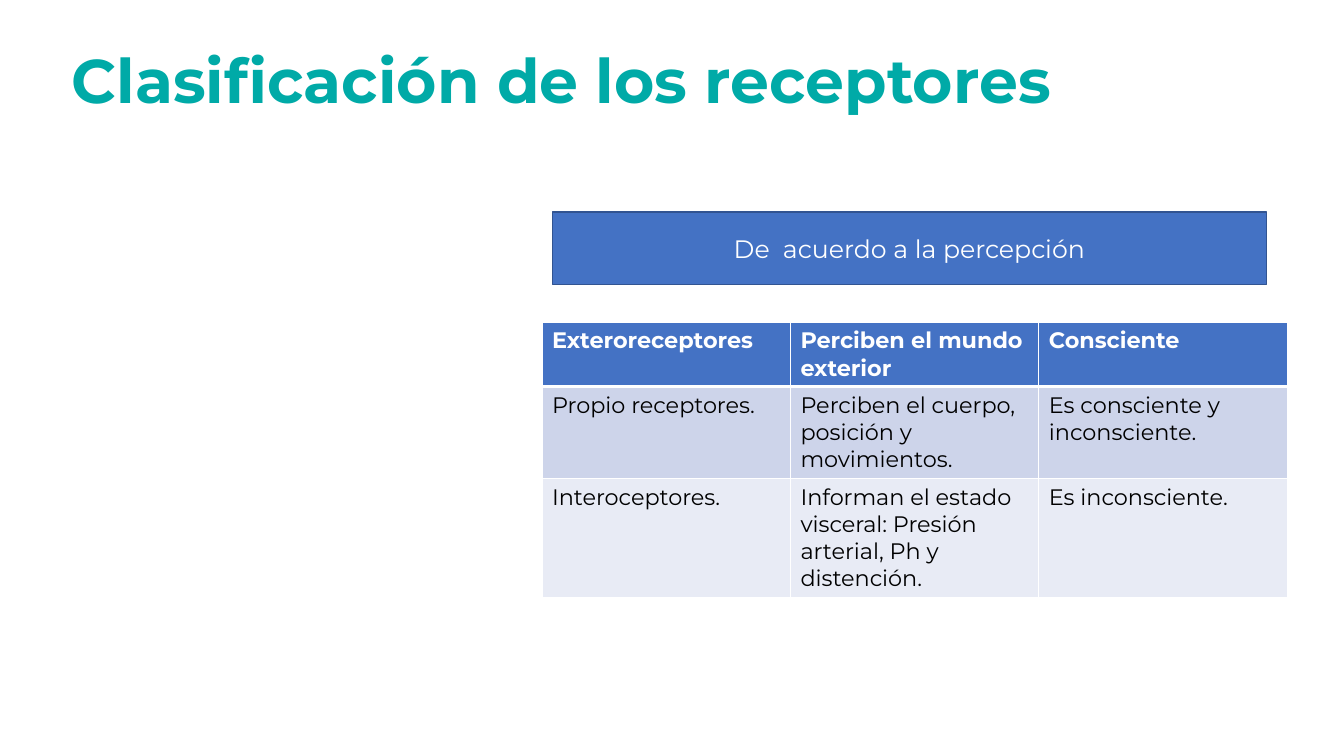
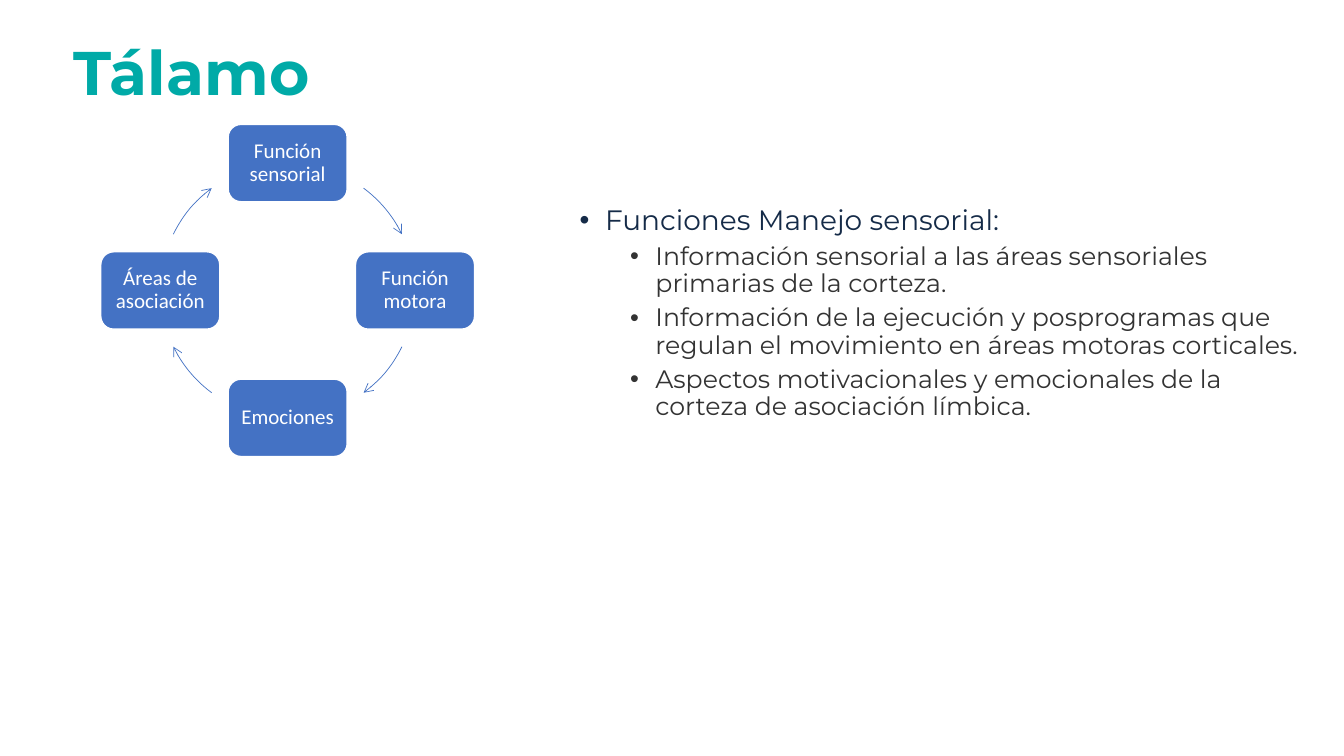
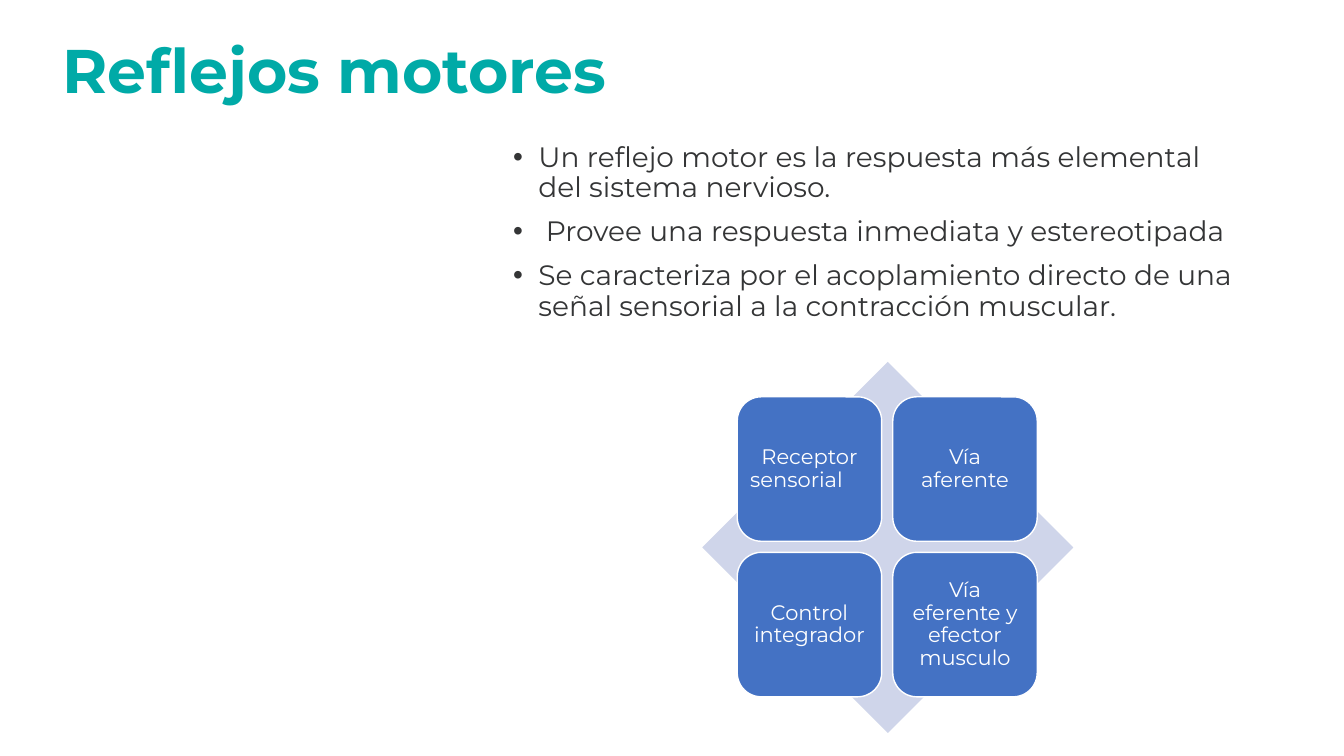
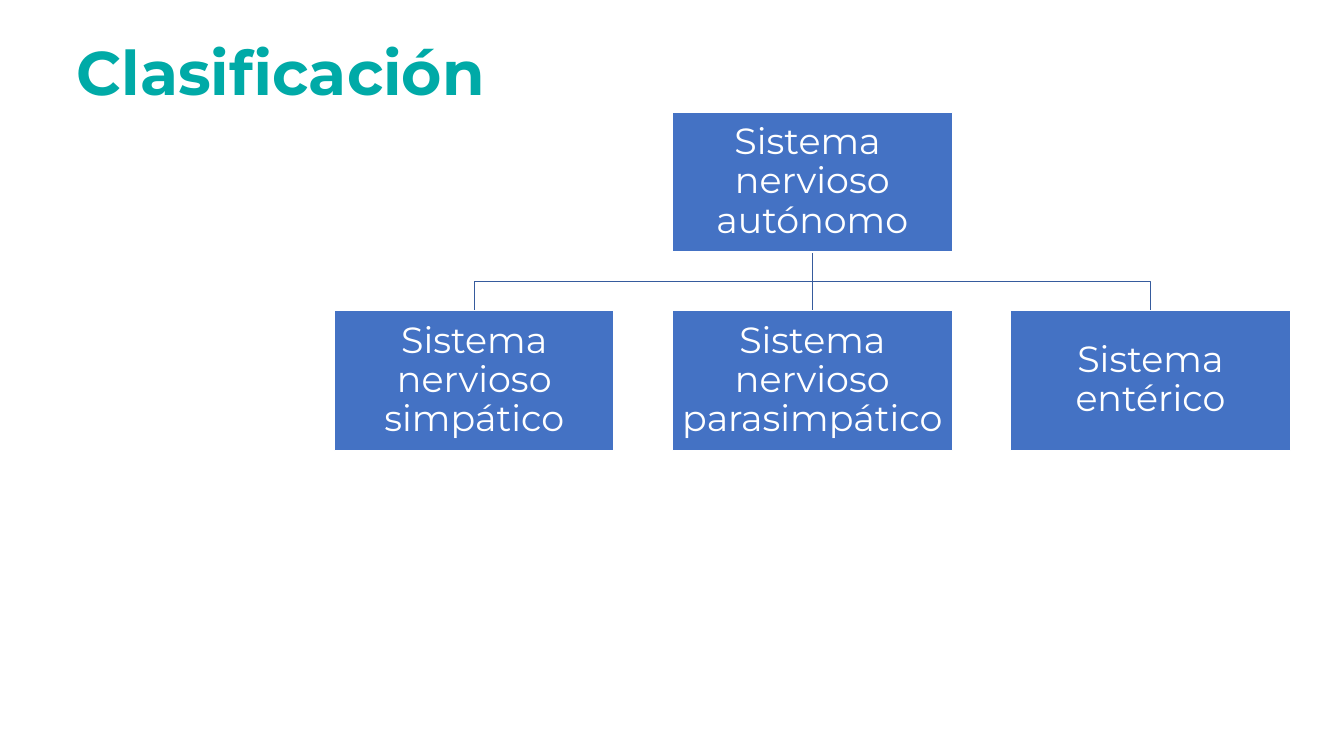
from math import cos, radians, sin
from lxml.etree import SubElement
from pptx import Presentation
from pptx.dml.color import RGBColor
from pptx.enum.shapes import MSO_CONNECTOR as LINK, MSO_SHAPE as SHAPE
from pptx.enum.text import MSO_ANCHOR as ANCHOR, PP_ALIGN as ALIGN
from pptx.oxml.ns import qn
from pptx.util import Cm, Pt

COLORS = {
    "title": "00AAA7",
    "blue": "4472C4",
    "edge": "325491",
    "link": "365B9D",
    "band": "CDD4EA",
    "light": "E8EBF5",
    "diamond": "CFD5EA",
    "navy": "152B48",
    "gray": "333333",
    "soft": "343536",
    "white": "FFFFFF",
    "black": "000000",
}
COLORS = {name: RGBColor.from_string(value) for name, value in COLORS.items()}


def write(frame, text, size=18, color="white", font="Montserrat", bold=False,
          align=ALIGN.LEFT, spacing=0.9, before=0, level=None, tab=None):
    para = frame.paragraphs[0]
    if para.runs:
        para = frame.add_paragraph()
        para.space_before = Pt(before)
    props = para._p.get_or_add_pPr()
    if level is not None:
        para.level = level
        props.set("marL", str(Cm(0.64 + 1.27 * level)))
        props.set("indent", str(Cm(-0.64)))
        SubElement(props, qn("a:buFont"), typeface="Arial")
        SubElement(props, qn("a:buChar"), char="•")
    if tab:
        props.set("defTabSz", str(Cm(tab)))
    para.alignment = align
    para.line_spacing = spacing
    span = para.add_run()
    span.text = text
    span.font.name = font
    span.font.size = Pt(size)
    span.font.bold = bold
    span.font.color.rgb = COLORS[color]


def add_block(page, kind, left, top, width, height, text="", fill="blue", line="white",
              margin=0.15, **style):
    block = page.shapes.add_shape(kind, Cm(left), Cm(top), Cm(width), Cm(height))
    block.shadow.inherit = False
    block.fill.solid()
    block.fill.fore_color.rgb = COLORS[fill]
    if line:
        block.line.color.rgb = COLORS[line]
        block.line.width = Pt(1)
    else:
        block.line.fill.background()
    if text:
        frame = block.text_frame
        frame.word_wrap = True
        frame.vertical_anchor = ANCHOR.MIDDLE
        frame.margin_left = frame.margin_right = Cm(margin)
        frame.margin_top = frame.margin_bottom = Cm(margin)
        write(frame, text, align=ALIGN.CENTER, **style)


deck = Presentation()
deck.slide_width = Cm(33.87)
deck.slide_height = Cm(19.05)

titles = [
    ("Clasificación de los receptores", 1.55, 0.27),
    ("Tálamo", 1.6, 0.07),
    ("Reflejos motores", 1.32, 0.02),
    ("Clasificación", 1.68, 0.07),
]
pages = []
for title, left, top in titles:
    page = deck.slides.add_slide(deck.slide_layouts[6])
    box = page.shapes.add_textbox(Cm(left), Cm(top), Cm(29.21), Cm(3.68))
    box.text_frame.word_wrap = True
    box.text_frame.vertical_anchor = ANCHOR.MIDDLE
    write(box.text_frame, title, size=44, color="title", bold=True)
    pages.append(page)
receptors, thalamus, reflexes, systems = pages

rows = [
    ["Exteroreceptores", "Perciben el mundo exterior", "Consciente"],
    ["Propio receptores.", "Perciben el cuerpo, posición y movimientos.",
     "Es consciente y inconsciente."],
    ["Interoceptores.", "Informan el estado visceral: Presión arterial, Ph y distención.",
     "Es inconsciente."],
]
row_heights = [1.62, 2.32, 3]
row_fills = ["blue", "band", "light"]
table = receptors.shapes.add_table(3, 3, Cm(13.66), Cm(8.12), Cm(18.78),
                                   Cm(sum(row_heights))).table
for column in table.columns:
    column.width = Cm(6.26)
for number, texts in enumerate(rows):
    table.rows[number].height = Cm(row_heights[number])
    header = number == 0
    widths = {"a:lnL": 1, "a:lnR": 1, "a:lnT": 3 if number == 1 else 1,
              "a:lnB": 3 if header else 1}
    for cell, text in zip(table.rows[number].cells, texts):
        props = cell._tc.get_or_add_tcPr()
        for side, width in widths.items():
            border = SubElement(props, qn(side), w=str(Pt(width)))
            paint = SubElement(border, qn("a:solidFill"))
            SubElement(paint, qn("a:srgbClr"), val=str(COLORS["white"]))
        cell.fill.solid()
        cell.fill.fore_color.rgb = COLORS[row_fills[number]]
        write(cell.text_frame, text, size=16, color="white" if header else "black",
              bold=header, spacing=1.0)
add_block(receptors, SHAPE.RECTANGLE, 13.92, 5.34, 18, 1.83,
          "De  acuerdo a la percepción", line="edge", spacing=1.0)

thalamus_points = [
    ("Funciones Manejo sensorial:", 0, 20, "navy"),
    ("Información sensorial a las áreas sensoriales primarias de la corteza.", 1, 18, "gray"),
    ("Información de la ejecución y posprogramas que regulan el movimiento en áreas "
     "motoras corticales.", 1, 18, "gray"),
    ("Aspectos motivacionales y emocionales de la corteza de asociación límbica.",
     1, 18, "gray"),
]
reflex_points = [
    ("Un reflejo motor es la respuesta más elemental del sistema nervioso.", 0, 20, "soft"),
    (" Provee una respuesta inmediata y estereotipada", 0, 20, "soft"),
    ("Se caracteriza por el acoplamiento directo de una señal sensorial a la contracción "
     "muscular.", 0, 20, "soft"),
]
for page, left, top, points in [(thalamus, 14.36, 5.08, thalamus_points),
                                (reflexes, 12.68, 3.48, reflex_points)]:
    box = page.shapes.add_textbox(Cm(left), Cm(top), Cm(18.77), Cm(12.09))
    box.text_frame.word_wrap = True
    for text, level, size, color in points:
        write(box.text_frame, text, size=size, color=color, level=level,
              before=5 if level else 10)

center_x, center_y, radius = 7.25, 7.32, 3.21
node_width, node_height = 3, 1.95
functions = ["Función sensorial", "Función motora", "Emociones", "Áreas de asociación"]
arc_starts = [306.6, 26.2, 126.6, 206.2]
arc_sweep = 27.2
for number, (text, start) in enumerate(zip(functions, arc_starts)):
    angle = radians(90 * number - 90)
    add_block(thalamus, SHAPE.ROUNDED_RECTANGLE,
              center_x + radius * cos(angle) - node_width / 2,
              center_y + radius * sin(angle) - node_height / 2,
              node_width, node_height, text, size=15, font="Calibri")
    arc = thalamus.shapes.add_shape(SHAPE.ARC, Cm(center_x - radius), Cm(center_y - radius),
                                    Cm(2 * radius), Cm(2 * radius))
    arc.adjustments[0] = start * 0.6
    arc.adjustments[1] = (start + arc_sweep) * 0.6
    arc.shadow.inherit = False
    arc.fill.background()
    arc.line.color.rgb = COLORS["blue"]
    arc.line.width = Pt(0.5)
    SubElement(arc.element.spPr.find(qn("a:ln")), qn("a:tailEnd"), type="arrow")

add_block(reflexes, SHAPE.DIAMOND, 17.7, 9.12, 9.35, 9.35, fill="diamond", line=None)
stages = ["Receptor sensorial\t", "Vía aferente", "Control integrador",
          "Vía eferente y efector musculo"]
for number, text in enumerate(stages):
    row, column = divmod(number, 2)
    add_block(reflexes, SHAPE.ROUNDED_RECTANGLE, 18.58 + 3.92 * column, 10 + 3.92 * row,
              3.64, 3.64, text, size=15, tab=1.85)

box_width, box_height = 7.05, 3.52
first_left, step = 8.43, 8.52
parent_top, child_top = 2.83, 7.83
parent_bottom = parent_top + box_height
bar = (parent_bottom + child_top) / 2
left_x, middle_x, right_x = [first_left + step * column + box_width / 2 for column in range(3)]
links = [systems.shapes.add_connector(LINK.STRAIGHT, Cm(middle_x), Cm(parent_bottom),
                                      Cm(middle_x), Cm(child_top))]
for child_x in (right_x, left_x):
    outline = systems.shapes.build_freeform(Cm(middle_x), Cm(parent_bottom))
    corners = [(middle_x, bar), (child_x, bar), (child_x, child_top)]
    outline.add_line_segments([(Cm(x), Cm(y)) for x, y in corners], close=False)
    elbow = outline.convert_to_shape()
    elbow.fill.background()
    links.append(elbow)
for link in links:
    link.line.color.rgb = COLORS["link"]
    link.line.width = Pt(1)
    SubElement(link.element.spPr, qn("a:effectLst"))
branches = [
    ("Sistema  nervioso autónomo", 1, parent_top),
    ("Sistema nervioso simpático", 0, child_top),
    ("Sistema nervioso parasimpático", 1, child_top),
    ("Sistema entérico", 2, child_top),
]
for text, column, top in branches:
    add_block(systems, SHAPE.RECTANGLE, first_left + step * column, top, box_width, box_height,
              text, size=26, margin=0.05)

deck.save("out.pptx")
